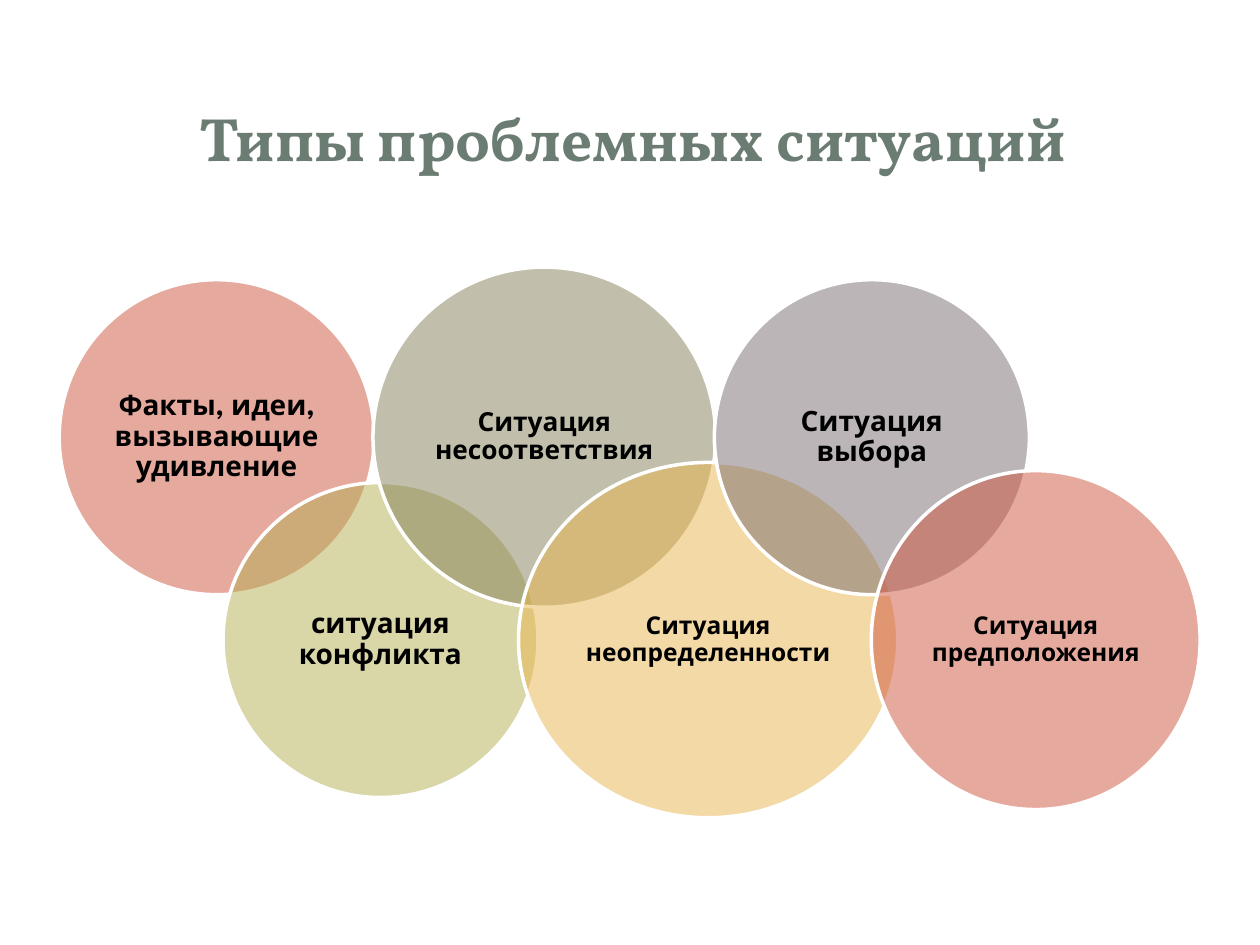
from dataclasses import dataclass
from lxml.etree import SubElement
from pptx import Presentation
from pptx.dml.color import RGBColor
from pptx.enum.shapes import MSO_SHAPE
from pptx.enum.text import MSO_ANCHOR, PP_ALIGN
from pptx.oxml.ns import qn
from pptx.util import Inches, Pt


@dataclass(frozen=True)
class Theme:
    head: str = "Vollkorn"
    body: str = "League Spartan"
    title: str = "6B7D72"
    ink: str = "000000"
    edge: str = "FFFFFF"
    red: str = "CF543F"
    lime: str = "B5AE53"
    olive: str = "848058"
    gold: str = "E8B54D"
    mauve: str = "786C71"
    huge: int = 35
    big: int = 16
    mid: int = 15
    small: int = 14
    alpha: int = 50


THEME = Theme()
WIDE, HIGH = 10, 7.5
COLS, ROWS = 7, 3
CIRCLES = [
    ("Факты, идеи, вызывающие удивление", THEME.red, THEME.big, 2.5, 2.5),
    ("ситуация конфликта", THEME.lime, THEME.big, 2.5, 2.5),
    ("Ситуация несоответствия", THEME.olive, THEME.mid, 2.72, 2.7),
    ("Ситуация неопределенности", THEME.gold, THEME.small, 3.01, 2.82),
    ("Ситуация выбора", THEME.mauve, THEME.big, 2.5, 2.5),
    ("Ситуация предположения", THEME.red, THEME.small, 2.61, 2.69),
]


def write(frame, text, font, size, color, inset):
    frame.word_wrap = True
    frame.vertical_anchor = MSO_ANCHOR.MIDDLE
    frame.margin_left = frame.margin_right = Inches(inset)
    frame.margin_top = frame.margin_bottom = Inches(inset)
    para = frame.paragraphs[0]
    para.alignment = PP_ALIGN.CENTER
    run = para.add_run()
    run.text = text
    run.font.name = font
    run.font.size = Pt(size)
    run.font.bold = True
    run.font.color.rgb = RGBColor.from_string(color)
    return para


def add_title(slide, box, text):
    area = slide.shapes.add_textbox(*map(Inches, box))
    write(area.text_frame, text, THEME.head, THEME.huge, THEME.title, 0.05)


def add_circle(slide, box, text, color, size):
    oval = slide.shapes.add_shape(MSO_SHAPE.OVAL, *map(Inches, box))
    oval.shadow.inherit = False
    oval.fill.solid()
    oval.fill.fore_color.rgb = RGBColor.from_string(color)
    tint = oval.fill._xPr.find(".//" + qn("a:srgbClr"))
    SubElement(tint, qn("a:alpha"), val=str(THEME.alpha * 1000))
    oval.line.color.rgb = RGBColor.from_string(THEME.edge)
    oval.line.width = Pt(2)
    para = write(oval.text_frame, text, THEME.body, size, THEME.ink, 0.06)
    para.line_spacing = 0.9


def add_chain(slide, box, items):
    left, top, width, height = box
    for i, (text, color, size, w, h) in enumerate(items):
        x = left + width * (i + 1) / COLS
        y = top + height * (i % 2 + 1) / ROWS
        add_circle(slide, (x - w / 2, y - h / 2, w, h), text, color, size)


def main():
    deck = Presentation()
    deck.slide_width, deck.slide_height = Inches(WIDE), Inches(HIGH)
    slide = deck.slides.add_slide(deck.slide_layouts[6])
    add_title(slide, (0.51, 0.52, 9.03, 1.14), "Типы проблемных ситуаций")
    add_chain(slide, (0.42, 1.86, 9.1, 4.83), CIRCLES)
    deck.save("out.pptx")


if __name__ == "__main__":
    main()
